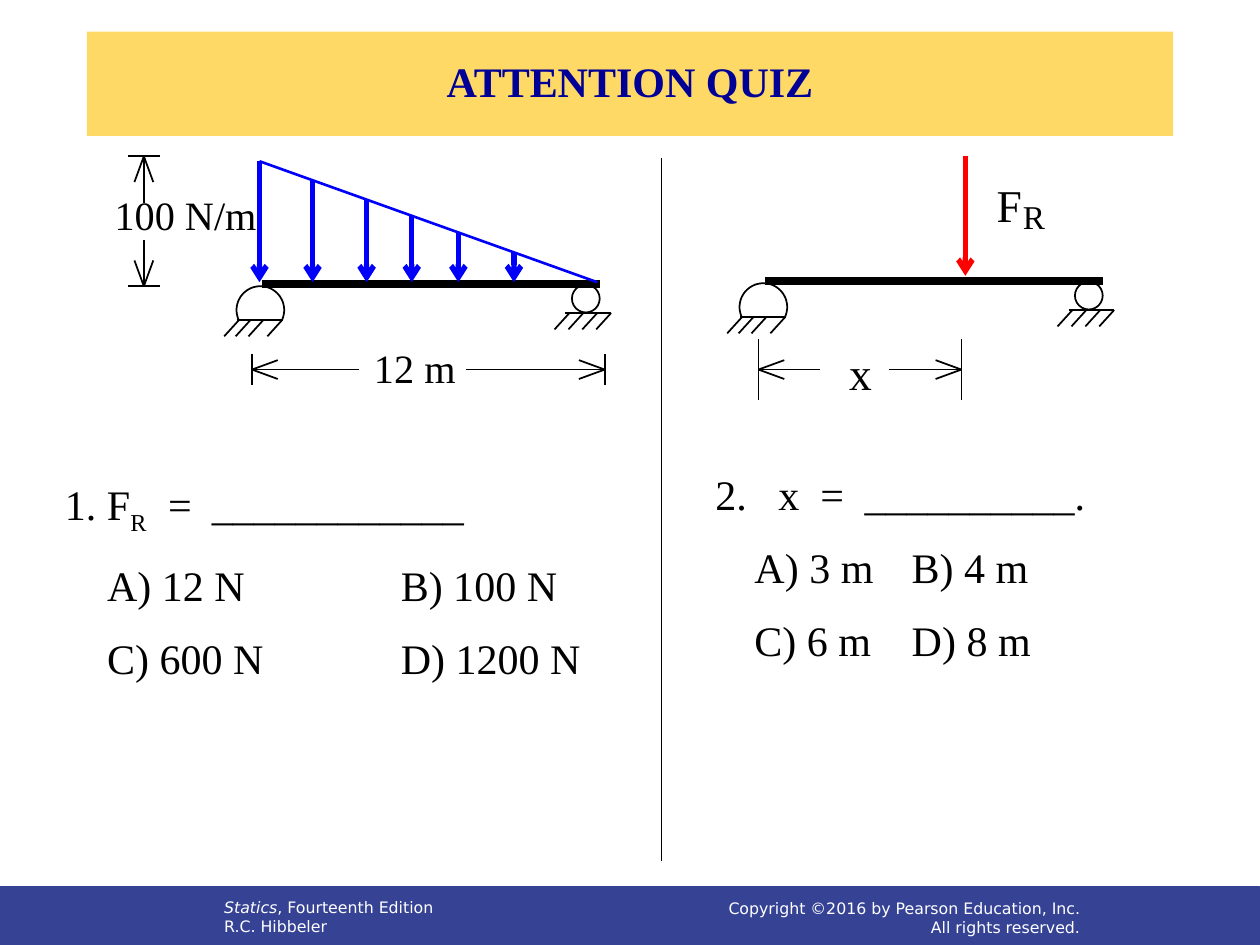
import math

import lxml.etree
import pptx
import pptx.dml.color
import pptx.enum.shapes
import pptx.enum.text
import pptx.oxml.ns
import pptx.util

Cm = pptx.util.Cm
Pt = pptx.util.Pt
RGBColor = pptx.dml.color.RGBColor
SHAPES = pptx.enum.shapes.MSO_SHAPE
ALIGN = pptx.enum.text.PP_ALIGN
ANCHOR = pptx.enum.text.MSO_ANCHOR
qn = pptx.oxml.ns.qn

BLACK = RGBColor(0x00, 0x00, 0x00)
WHITE = RGBColor(0xFF, 0xFF, 0xFF)
GOLD = RGBColor(0xFF, 0xD9, 0x66)
NAVY = RGBColor(0x00, 0x00, 0x96)
FOOTER_BLUE = RGBColor(0x36, 0x43, 0x95)
LOAD_BLUE = RGBColor(0x00, 0x00, 0xFA)
FORCE_RED = RGBColor(0xFF, 0x00, 0x00)
SERIF = "Times New Roman"
SANS = "DejaVu Sans"


def style_font(font, name, size, color):
    font.name = name
    font.size = Pt(size)
    font.color.rgb = color


def add_line(page, x1, y1, x2, y2, color=BLACK, width=1, arrow=False):
    line = page.shapes.add_connector(
        pptx.enum.shapes.MSO_CONNECTOR.STRAIGHT, Cm(x1), Cm(y1), Cm(x2), Cm(y2))
    line.line.color.rgb = color
    line.line.width = Pt(width)
    if arrow:
        lxml.etree.SubElement(line.line._get_or_add_ln(), qn("a:tailEnd"), type="arrow")
    lxml.etree.SubElement(line._element.spPr, qn("a:effectLst"))


def add_text_box(page, left, top, width, height, wrap=True):
    box = page.shapes.add_textbox(Cm(left), Cm(top), Cm(width), Cm(height))
    box.text_frame.word_wrap = wrap
    return box


def add_label(page, left, top, width, height, text, size):
    frame = add_text_box(page, left, top, width, height, wrap=False).text_frame
    frame.margin_left = frame.margin_top = frame.margin_right = frame.margin_bottom = 0
    frame.text = text
    style_font(frame.paragraphs[0].runs[0].font, SERIF, size, BLACK)


def outline_only(shape):
    shape.shadow.inherit = False
    shape.fill.background()
    shape.line.color.rgb = BLACK
    shape.line.width = Pt(1)


def add_ground(page, left, top, width, hatch_offsets):
    add_line(page, left, top, left + width, top)
    for offset in hatch_offsets:
        x = left + offset
        add_line(page, x - 0.3, top + 0.33, x, top)


def add_beam(page, left, top):
    add_line(page, left + 0.76, top, left + 7.57, top, width=4.5)

    center_x, center_y, radius = left + 0.73, top + 0.53, 0.48
    points = []
    for degrees in range(155, 386, 5):
        angle = math.radians(degrees)
        points.append((Cm(center_x + radius * math.cos(angle)),
                       Cm(center_y + radius * math.sin(angle))))
    builder = page.shapes.build_freeform(*points[0])
    builder.add_line_segments(points[1:], close=False)
    outline_only(builder.convert_to_shape())
    add_ground(page, left + 0.25, top + 0.73, 0.94, (0.05, 0.28, 0.54, 0.92))

    roller = page.shapes.add_shape(
        SHAPES.OVAL, Cm(left + 7.01), Cm(top + 0.02), Cm(0.56), Cm(0.56))
    outline_only(roller)
    add_ground(page, left + 6.88, top + 0.59, 0.92, (0.08, 0.36, 0.64, 0.92))


def add_dimension_end(page, tip_x, tip_y, tail_x, tail_y, tick):
    length = math.hypot(tail_x - tip_x, tail_y - tip_y)
    along_x, along_y = (tail_x - tip_x) / length, (tail_y - tip_y) / length
    add_line(page, tip_x, tip_y, tail_x, tail_y)
    for side in (-0.19, 0.19):
        add_line(page, tip_x, tip_y,
                 tip_x + 0.52 * along_x - side * along_y,
                 tip_y + 0.52 * along_y + side * along_x)
    half = tick / 2
    add_line(page, tip_x - half * along_y, tip_y - half * along_x,
             tip_x + half * along_y, tip_y + half * along_x)


def add_load_diagram(page, left, top):
    add_beam(page, left + 2.52, top + 2.72)

    load_left, load_top, load_width, load_height = left + 3.23, top + 0.25, 6.81, 2.44
    load_bottom = load_top + load_height
    add_line(page, load_left, load_top, load_left + load_width, load_bottom, LOAD_BLUE, 1.5)
    for offset in (0, 1.07, 2.16, 3.07, 4.01, 5.13):
        x = load_left + offset
        add_line(page, x, load_top + load_height * offset / load_width,
                 x, load_bottom, LOAD_BLUE, 3, arrow=True)

    add_dimension_end(page, left + 0.9, top + 0.15, left + 0.9, top + 1.09, 0.64)
    add_dimension_end(page, left + 0.9, top + 2.77, left + 0.9, top + 1.83, 0.64)
    add_label(page, left + 0.31, top + 0.84, 2.9, 0.99, "100 N/m", 23)
    add_dimension_end(page, left + 3.08, top + 4.45, left + 5.24, top + 4.45, 0.63)
    add_dimension_end(page, left + 10.19, top + 4.45, left + 7.4, top + 4.45, 0.63)
    add_label(page, left + 5.54, top + 3.93, 1.65, 0.99, "12 m", 23)


def add_resultant_diagram(page, left, top):
    add_beam(page, left + 0.66, top + 2.66)
    add_line(page, left + 5.46, top + 0.15, left + 5.46, top + 2.56, FORCE_RED, 3, arrow=True)
    add_label(page, left + 6.09, top + 0.56, 0.51, 1.12, "F", 26)
    add_label(page, left + 6.62, top + 0.96, 0.46, 0.81, "R", 19)
    add_dimension_end(page, left + 1.29, top + 4.45, left + 2.54, top + 4.45, 1.22)
    add_dimension_end(page, left + 5.38, top + 4.45, left + 3.93, top + 4.45, 1.22)
    add_label(page, left + 3.12, top + 3.96, 0.46, 1.12, "x", 26)


def add_question(page, left, top, width, inset, prompt, prompt_tabs, options, option_tabs):
    frame = add_text_box(page, left, top, width, 4.32).text_frame
    frame.margin_left = Cm(inset)
    rows = [(prompt, prompt_tabs)] + [([(row, False)], option_tabs) for row in options]
    for index, (parts, tabs) in enumerate(rows):
        para = frame.paragraphs[0] if index == 0 else frame.add_paragraph()
        tab_list = lxml.etree.SubElement(para._p.get_or_add_pPr(), qn("a:tabLst"))
        for position in tabs:
            lxml.etree.SubElement(tab_list, qn("a:tab"), pos=str(Cm(position)), algn="l")
        if index:
            para.space_before = Pt(13)
        for text, subscript in parts:
            span = para.add_run()
            span.text = text
            style_font(span.font, SERIF, 24, BLACK)
            if subscript:
                span._r.get_or_add_rPr().set("baseline", "-25000")


def add_title(page, left, top, width, height):
    title = page.shapes.title
    title.left, title.top, title.width, title.height = Cm(left), Cm(top), Cm(width), Cm(height)
    title.fill.solid()
    title.fill.fore_color.rgb = GOLD
    title.text_frame.text = "ATTENTION QUIZ"
    title.text_frame.vertical_anchor = ANCHOR.MIDDLE
    para = title.text_frame.paragraphs[0]
    para.alignment = ALIGN.CENTER
    para.line_spacing = 0.9
    style_font(para.runs[0].font, SERIF, 24, NAVY)
    para.runs[0].font.bold = True


def add_footer(page, left, top, width, height):
    band = page.shapes.add_shape(SHAPES.RECTANGLE, Cm(left), Cm(top), Cm(width), Cm(height))
    band.shadow.inherit = False
    band.fill.solid()
    band.fill.fore_color.rgb = FOOTER_BLUE
    band.line.color.rgb = FOOTER_BLUE
    band.line.width = Pt(0.5)

    book = add_text_box(page, left + 4.27, top + 0.1, 15.65, 1.02)
    rights = add_text_box(page, left + 11.86, top + 0.08, 10.16, 1.09)
    book.text_frame.text = "Statics\nR.C. Hibbeler"
    book.text_frame.paragraphs[0].runs[0].font.italic = True
    book.text_frame.paragraphs[0].add_run().text = ", Fourteenth Edition"
    rights.text_frame.text = "Copyright ©2016 by Pearson Education, Inc.\nAll rights reserved."
    rights.text_frame.vertical_anchor = ANCHOR.MIDDLE
    for box, alignment in ((book, ALIGN.LEFT), (rights, ALIGN.RIGHT)):
        for para in box.text_frame.paragraphs:
            para.alignment = alignment
            for span in para.runs:
                style_font(span.font, SANS, 9, WHITE)


def main():
    deck = pptx.Presentation()
    deck.slide_width, deck.slide_height = Cm(25.4), Cm(19.05)
    page = deck.slides.add_slide(deck.slide_layouts[5])
    add_footer(page, 0, 17.88, 25.4, 1.17)
    add_title(page, 1.75, 0.64, 21.9, 2.1)
    add_line(page, 13.34, 3.18, 13.34, 17.35, width=0.75)
    add_load_diagram(page, 2, 3)
    add_resultant_diagram(page, 14, 3)
    add_question(page, 0.64, 9.53, 12.27, 0.67,
                 [("1. F", False), ("R", True), ("\t=\t____________", False)], (2.08, 2.96),
                 ("\tA) 12 N\tB) 100 N", "\tC) 600 N\tD) 1200 N"), (0.85, 6.77))
    add_question(page, 14.17, 9.32, 10.16, 0.25,
                 [("2.\tx\t=\t__________.", False)], (1.27, 2.12, 3.01),
                 ("\tA) 3 m\tB) 4 m", "\tC) 6 m\tD) 8 m"), (0.79, 3.96))
    deck.save("out.pptx")


if __name__ == "__main__":
    main()
